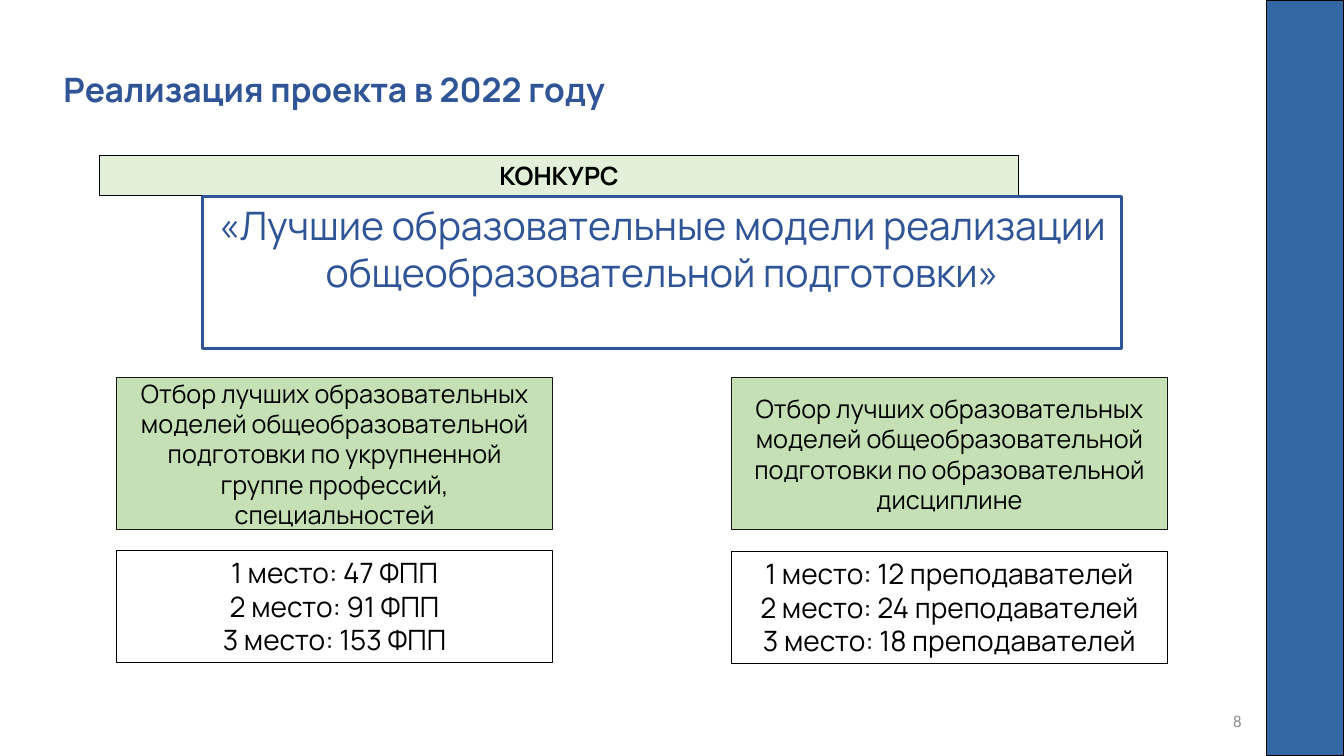
from pptx import Presentation
from pptx.dml.color import RGBColor
from pptx.enum.shapes import MSO_SHAPE
from pptx.enum.text import MSO_ANCHOR, PP_ALIGN
from pptx.util import Pt

HUES = {
    "blue": "2F5597", "band": "3468A5", "pale": "E2F0D9", "green": "C5E0B4",
    "white": "FFFFFF", "black": "000000", "edge": "161616", "gray": "8C8C8C",
}
WIDE, HIGH = 960, 540
TOP, MID = MSO_ANCHOR.TOP, MSO_ANCHOR.MIDDLE
GOALS = "Отбор лучших образовательных моделей общеобразовательной подготовки по "
TRACKS = [
    (83.5, GOALS + "укрупненной группе профессий, специальностей", 393.2,
     "1 место: 47 ФПП\n2 место: 91 ФПП\n3 место: 153 ФПП"),
    (522.7, GOALS + "образовательной дисциплине", 393.9,
     "1 место: 12 преподавателей\n2 место: 24 преподавателей\n3 место: 18 преподавателей"),
]


def hue(name):
    return RGBColor.from_string(HUES[name])


def write(shape, text, size, color="black", bold=False,
          align=PP_ALIGN.CENTER, anchor=TOP, font="Manrope"):
    frame = shape.text_frame
    frame.text = text
    frame.word_wrap = True
    frame.vertical_anchor = anchor
    for para in frame.paragraphs:
        para.alignment = align
        for run in para.runs:
            run.font.name = font
            run.font.size = Pt(size)
            run.font.bold = bold
            run.font.color.rgb = hue(color)


def add_box(slide, place, fill, line="black", width=0.75):
    box = slide.shapes.add_shape(MSO_SHAPE.RECTANGLE, *map(Pt, place))
    box.shadow.inherit = False
    box.fill.solid()
    box.fill.fore_color.rgb = hue(fill)
    box.line.color.rgb = hue(line)
    box.line.width = Pt(width)
    return box


def add_label(slide, place, text, size, **style):
    label = slide.shapes.add_textbox(*map(Pt, place))
    write(label, text, size, **style)


def add_track(slide, left, goal, top, prizes):
    card = add_box(slide, (left, 270, 311, 108.5), "green", "edge")
    write(card, goal, 18, anchor=MID)
    frame = card.text_frame
    frame.margin_left = frame.margin_right = Pt(7.2)
    frame.margin_top = frame.margin_bottom = Pt(7.2)
    write(add_box(slide, (left, top, 311, 80), "white"), prizes, 20)


def main():
    deck = Presentation()
    deck.slide_width, deck.slide_height = Pt(WIDE), Pt(HIGH)
    slide = deck.slides.add_slide(deck.slide_layouts[6])

    add_label(slide, (678, 500.5, 216, 28.8), "8", 12, color="gray",
              align=PP_ALIGN.RIGHT, anchor=MID, font="Calibri")
    contest = add_box(slide, (71, 111, 656.6, 29), "pale")
    write(contest, "КОНКУРС", 18, bold=True)
    theme = add_box(slide, (144.7, 140.3, 656.6, 108.7), "white", "blue", 2.25)
    write(theme, "«Лучшие образовательные модели реализации "
          "общеобразовательной подготовки»", 28, "blue")
    add_box(slide, (904.6, 0, 55.4, HIGH), "band", width=1)
    for track in TRACKS:
        add_track(slide, *track)
    add_label(slide, (38.2, 45.4, 402, 36), "Реализация проекта в 2022 году",
              24, color="blue", bold=True, align=PP_ALIGN.LEFT)
    deck.save("out.pptx")


if __name__ == "__main__":
    main()
